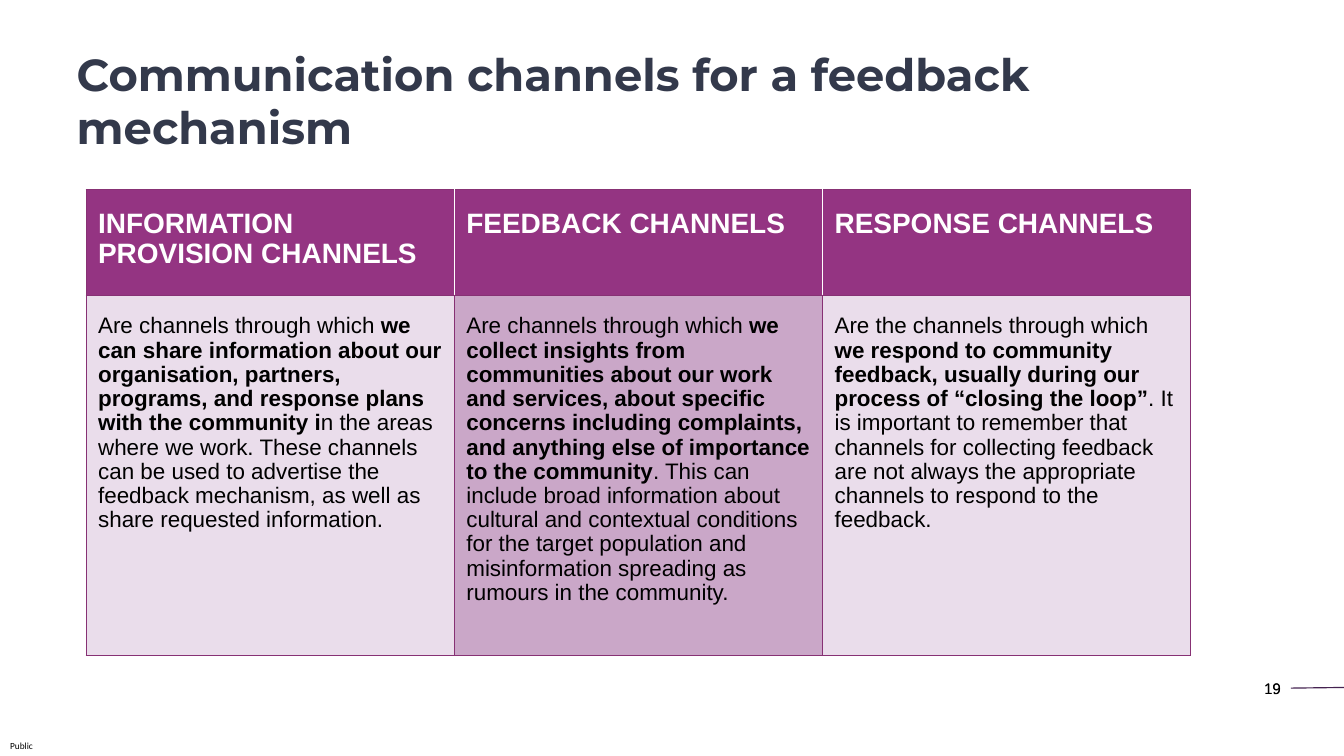
from lxml.etree import SubElement
from pptx import Presentation
from pptx.dml.color import RGBColor
from pptx.enum.shapes import MSO_CONNECTOR as Connector
from pptx.enum.text import MSO_ANCHOR as Anchor, MSO_AUTO_SIZE as AutoSize, PP_ALIGN as Align
from pptx.oxml.ns import qn
from pptx.util import Inches, Pt

COLUMNS, ROWS = 80, 45
PURPLE, BORDER, WHITE, BLACK = "943482", "873174", "FFFFFF", "000000"
HEADINGS = ["INFORMATION PROVISION CHANNELS", "FEEDBACK CHANNELS", "RESPONSE CHANNELS"]
# Each description is plain text, then bold, then plain again.
DESCRIPTIONS = [
    ("Are channels through which ",
     "we can share information about our organisation, partners, programs, and response plans "
     "with the community i",
     "n the areas where we work. These channels can be used to advertise the feedback mechanism, "
     "as well as share requested information."),
    ("Are channels through which ",
     "we collect insights from communities about our work and services, about specific concerns "
     "including complaints, and anything else of importance to the community",
     ". This can include broad information about cultural and contextual conditions for the target "
     "population and misinformation spreading as rumours in the community."),
    ("Are the channels through which ",
     "we respond to community feedback, usually during our process of “closing the loop”",
     ". It is important to remember that channels for collecting feedback are not always the "
     "appropriate channels to respond to the feedback."),
]
DESCRIPTION_FILLS = ["EADDEB", "CAA7C8", "EADDEB"]


def color(value):
    return RGBColor.from_string(value)


def add_span(para, text, font="Arial", size=24, ink=BLACK, bold=False):
    span = para.add_run()
    span.text = text
    span.font.name, span.font.size, span.font.bold = font, Pt(size), bold
    span.font.color.rgb = color(ink)


def set_borders(cell, **sides):
    """Draw one-point borders; sides maps L, R, T and B to colours."""
    properties = cell._tc.get_or_add_tcPr()
    for position, side in enumerate("LRTB"):
        line = properties.makeelement(qn(f"a:ln{side}"), {"w": str(Pt(1))})
        fill = SubElement(line, qn("a:solidFill"))
        SubElement(fill, qn("a:srgbClr"), val=sides[side])
        properties.insert(position, line)


class SlideBuilder:
    """Places styled elements on a grid of 80 columns by 45 rows."""

    def __init__(self, deck):
        self.deck = deck
        self.page = deck.slides.add_slide(deck.slide_layouts[5])

    def x(self, columns):
        return round(self.deck.slide_width * columns / COLUMNS)

    def y(self, rows):
        return round(self.deck.slide_height * rows / ROWS)

    def area(self, left, top, width, height):
        return self.x(left), self.y(top), self.x(width), self.y(height)

    def title(self, text, *place):
        box = self.page.shapes.title
        box.left, box.top, box.width, box.height = self.area(*place)
        frame = box.text_frame
        frame.vertical_anchor, frame.auto_size = Anchor.TOP, AutoSize.NONE
        para = frame.paragraphs[0]
        para.alignment = Align.LEFT
        add_span(para, text, font="Montserrat", size=48, ink="33394B", bold=True)

    def label(self, text, *place, align, anchor=Anchor.TOP, inset=None, **style):
        box = self.page.shapes.add_textbox(*self.area(*place))
        frame = box.text_frame
        frame.word_wrap, frame.vertical_anchor = True, anchor
        if inset is not None:
            frame.margin_left = frame.margin_right = inset
            frame.margin_top = frame.margin_bottom = inset
        frame.paragraphs[0].alignment = align
        add_span(frame.paragraphs[0], text, **style)

    def line(self, left, top, right, bottom):
        line = self.page.shapes.add_connector(
            Connector.STRAIGHT, self.x(left), self.y(top), self.x(right), self.y(bottom))
        line.line.color.rgb, line.line.width = color("452250"), Pt(1.25)
        SubElement(line._element.spPr, qn("a:effectLst"))

    def cell(self, cell, fill, spans, **style):
        """Fill a cell with spans, of which every second one is bold."""
        cell.fill.solid()
        cell.fill.fore_color.rgb = color(fill)
        cell.margin_left = cell.margin_right = Inches(0.18)
        cell.margin_top = cell.margin_bottom = Inches(0.29)
        para = cell.text_frame.paragraphs[0]
        para.line_spacing = 0.97
        for index, text in enumerate(spans):
            add_span(para, text, **{"bold": index % 2 == 1, **style})

    def channel_table(self, left, top, width, heights):
        count = len(HEADINGS)
        frame = self.page.shapes.add_table(
            len(heights), count, *self.area(left, top, width, sum(heights)))
        table = frame.table
        table.horz_banding = False
        for row, height in zip(table.rows, heights):
            row.height = self.y(height)
        for index, heading in enumerate(HEADINGS):
            table.columns[index].width = self.x(width / count)
            header, body = table.cell(0, index), table.cell(1, index)
            self.cell(header, PURPLE, [heading], size=30, ink=WHITE, bold=True)
            set_borders(header, T=BORDER, B=BORDER,
                        L=WHITE if index > 0 else BORDER,
                        R=WHITE if index < count - 1 else BORDER)
            self.cell(body, DESCRIPTION_FILLS[index], DESCRIPTIONS[index])
            set_borders(body, **dict.fromkeys("LRTB", BORDER))


def main():
    deck = Presentation()
    deck.slide_width, deck.slide_height = Inches(20), Inches(11.25)
    slide = SlideBuilder(deck)
    for font in ("Arial", "Open Sans"):
        slide.label("19", 73.76, 40.24, 2.88, 1.48, align=Align.RIGHT, font=font, size=16)
    slide.label("Public", 0, 43.84, 2.56, 1.16, align=Align.CENTER, anchor=Anchor.MIDDLE,
                inset=0, font="Calibri", size=10)
    slide.line(76.84, 40.96, 80, 40.92)
    slide.title("Communication channels for a feedback mechanism", 4.16, 2.56, 67.72, 6.88)
    slide.channel_table(5.12, 11.28, 65.76, [6.28, 21.48])
    deck.save("out.pptx")


if __name__ == "__main__":
    main()
